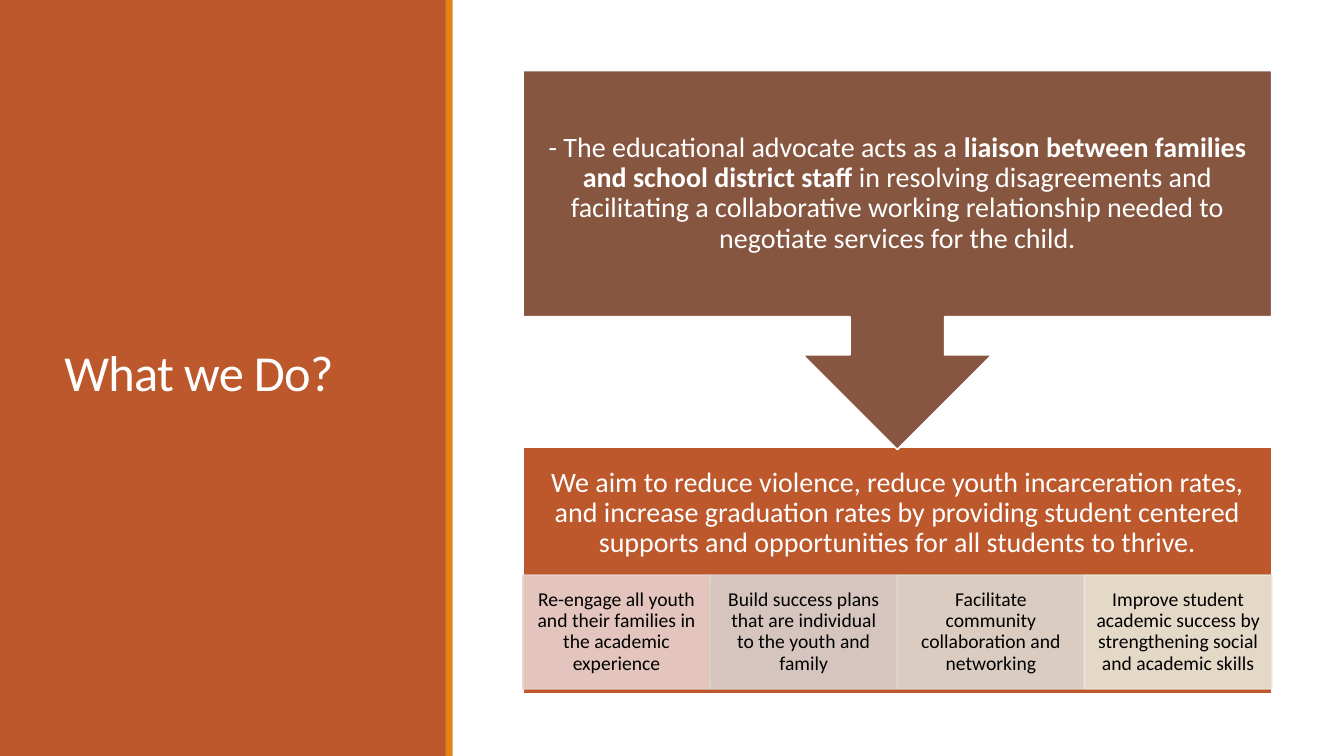
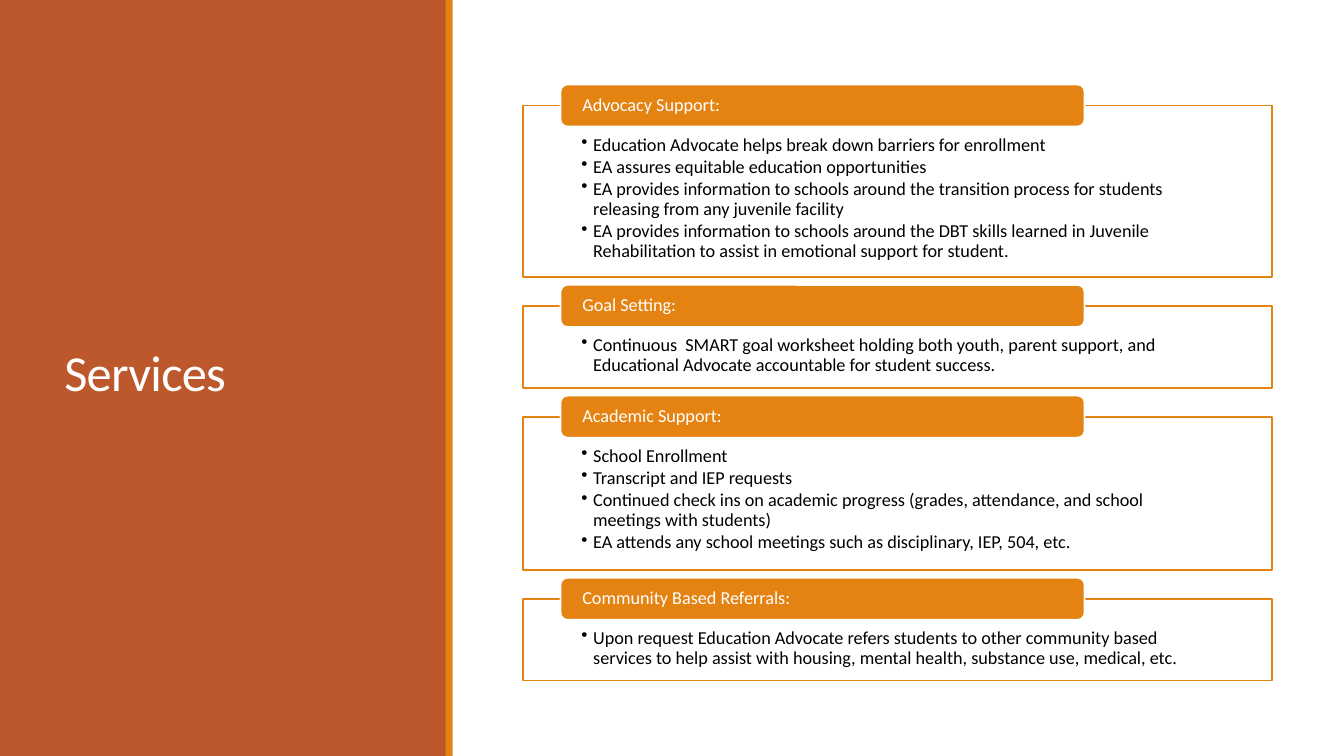
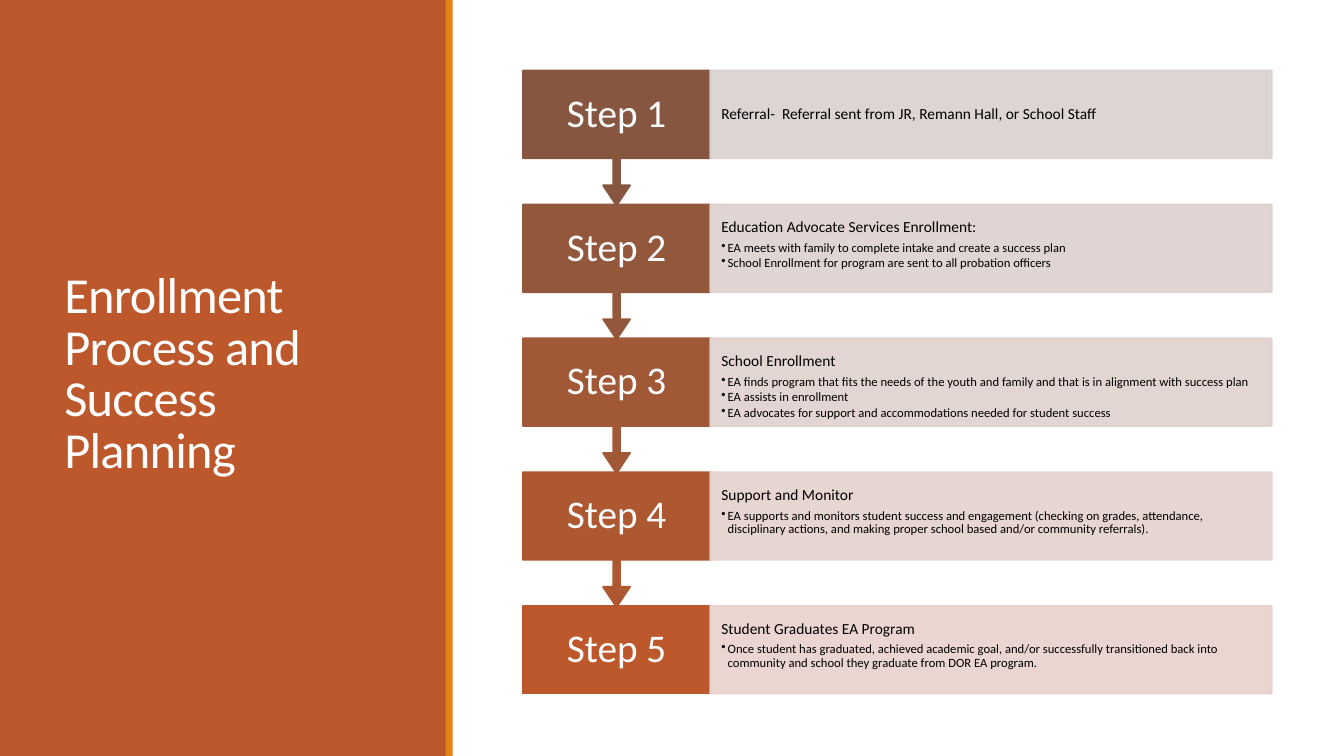
from collections import namedtuple

from lxml.etree import SubElement
from pptx import Presentation
from pptx.dml.color import RGBColor
from pptx.enum.shapes import MSO_SHAPE
from pptx.enum.text import MSO_ANCHOR, MSO_AUTO_SIZE, PP_ALIGN
from pptx.oxml.ns import qn
from pptx.util import Cm, Pt

# Shared look
FONT = "Calibri"
WHITE = RGBColor(0xFF, 0xFF, 0xFF)
BLACK = RGBColor(0x00, 0x00, 0x00)
RUST = RGBColor(0xBD, 0x58, 0x2C)
ORANGE = RGBColor(0xE4, 0x83, 0x12)
BROWN = RGBColor(0x86, 0x56, 0x40)
PALE_ROSE = RGBColor(0xE8, 0xD1, 0xCD)
PALE_BROWN = RGBColor(0xD9, 0xD1, 0xCF)
PALE_TAUPE = RGBColor(0xDE, 0xD9, 0xD1)
PALE_OLIVE = RGBColor(0xE9, 0xE7, 0xD8)
STEP_COLOURS = [
    (BROWN, PALE_BROWN),
    (RGBColor(0x93, 0x57, 0x3C), RGBColor(0xDD, 0xD1, 0xCE)),
    (RGBColor(0xA0, 0x58, 0x37), RGBColor(0xE1, 0xD1, 0xCE)),
    (RGBColor(0xAE, 0x58, 0x32), RGBColor(0xE4, 0xD1, 0xCD)),
    (RUST, PALE_ROSE),
]

# Boxes are in centimetres
Box = namedtuple("Box", "left top width height")
PAGE = Box(0, 0, 33.87, 19.05)
PANEL = Box(0, 0, 11.25, PAGE.height)
STRIPE = Box(11.23, 0, 0.18, PAGE.height)
TITLE = Box(1.37, 1.45, 8.56, 16.03)
CONTENT = Box(13.18, 1.78, 18.87, 15.7)

# Wording
LIAISON = [
    ("- The educational advocate acts as a ", False),
    ("liaison between families and school district staff", True),
    (" in resolving disagreements and facilitating a collaborative working "
     "relationship needed to negotiate services for the child.", False),
]
AIM = ("We aim to reduce violence, reduce youth incarceration rates, and increase "
       "graduation rates by providing student centered supports and opportunities "
       "for all students to thrive.")
GOALS = [
    ("Re-engage all youth and their families in the academic experience", PALE_ROSE),
    ("Build success plans that are individual to the youth and family", PALE_BROWN),
    ("Facilitate community collaboration and networking", PALE_TAUPE),
    ("Improve student academic success by strengthening social and academic skills",
     PALE_OLIVE),
]
# Heading, frame height, points
SERVICES = [
    ("Advocacy Support:", 4.32, [
        "Education Advocate helps break down barriers for enrollment",
        "EA assures equitable education opportunities",
        "EA provides information to schools around the transition process for "
        "students releasing from any juvenile facility",
        "EA provides information to schools around the DBT skills learned in "
        "Juvenile Rehabilitation to assist in emotional support for student.",
    ]),
    ("Goal Setting:", 2.06, [
        "Continuous  SMART goal worksheet holding both youth, parent support, and "
        "Educational Advocate accountable for student success.",
    ]),
    ("Academic Support:", 3.86, [
        "School Enrollment",
        "Transcript and IEP requests",
        "Continued check ins on academic progress (grades, attendance, and school "
        "meetings with students)",
        "EA attends any school meetings such as disciplinary, IEP, 504, etc.",
    ]),
    ("Community Based Referrals:", 2.06, [
        "Upon request Education Advocate refers students to other community based "
        "services to help assist with housing, mental health, substance use, "
        "medical, etc.",
    ]),
]
STEPS = [
    ("Referral-  Referral sent from JR, Remann Hall, or School Staff", []),
    ("Education Advocate Services Enrollment:", [
        "EA meets with family to complete intake and create a success plan",
        "School Enrollment for program are sent to all probation officers",
    ]),
    ("School Enrollment", [
        "EA finds program that fits the needs of the youth and family and that is "
        "in alignment with success plan",
        "EA assists in enrollment",
        "EA advocates for support and accommodations needed for student success",
    ]),
    ("Support and Monitor", [
        "EA supports and monitors student success and engagement (checking on "
        "grades, attendance, disciplinary actions, and making proper school based "
        "and/or community referrals).",
    ]),
    ("Student Graduates EA Program", [
        "Once student has graduated, achieved academic goal, and/or successfully "
        "transitioned back into community and school they graduate from DOR EA "
        "program.",
    ]),
]


def place(shape, box):
    shape.left, shape.top, shape.width, shape.height = (Cm(value) for value in box)


def add_block(slide, kind, box, fill, line=None, opacity=100):
    """Add a flat preset shape; opacity applies to its fill and line."""
    shape = slide.shapes.add_shape(kind, *(Cm(value) for value in box))
    shape.shadow.inherit = False
    shape.fill.solid()
    shape.fill.fore_color.rgb = fill
    if line is None:
        shape.line.fill.background()
    else:
        shape.line.color.rgb = line
        shape.line.width = Pt(1.25)
    if opacity < 100:
        for colour in shape.element.spPr.iter(qn("a:srgbClr")):
            if line == fill or colour.getparent().getparent().tag != qn("a:ln"):
                SubElement(colour, qn("a:alpha")).set("val", str(opacity * 1000))
    return shape


def set_frame(shape, side, top, bottom, anchor=MSO_ANCHOR.MIDDLE):
    """Set the text margins and the vertical anchor."""
    frame = shape.text_frame
    frame.word_wrap = True
    frame.auto_size = MSO_AUTO_SIZE.NONE
    frame.vertical_anchor = anchor
    frame.margin_left = frame.margin_right = Cm(side)
    frame.margin_top, frame.margin_bottom = Cm(top), Cm(bottom)


def add_paragraph(shape, runs, size, colour, align=PP_ALIGN.LEFT, bullet_indent=0):
    """Fill the first empty paragraph, or append one; runs are (text, bold)."""
    frame = shape.text_frame
    paragraph = frame.paragraphs[0]
    if paragraph.runs:
        paragraph = frame.add_paragraph()
    paragraph.alignment = align
    paragraph.line_spacing = 0.9
    paragraph.space_after = Pt(round(size * (0.15 if bullet_indent else 0.35), 1))
    if bullet_indent:
        paragraph.level = 1
        properties = paragraph._p.get_or_add_pPr()
        properties.set("marL", str(Cm(bullet_indent)))
        properties.set("indent", str(-Cm(bullet_indent)))
        SubElement(properties, qn("a:buChar")).set("char", "•")
    for text, bold in [(runs, False)] if isinstance(runs, str) else runs:
        run = paragraph.add_run()
        run.text = text
        run.font.name, run.font.size, run.font.bold = FONT, Pt(size), bold
        run.font.color.rgb = colour
    return paragraph


def add_panel_slide(presentation, title_text):
    """Add a slide with the coloured title panel on the left."""
    slide = presentation.slides.add_slide(presentation.slide_layouts[5])
    add_block(slide, MSO_SHAPE.RECTANGLE, PANEL, RUST)
    add_block(slide, MSO_SHAPE.RECTANGLE, STRIPE, ORANGE)
    title = slide.shapes.title
    place(title, TITLE)
    set_frame(title, 0.25, 0.13, 0.13)
    paragraph = add_paragraph(title, title_text, 36, WHITE)
    paragraph.line_spacing = 0.85
    paragraph.space_after = Pt(0)
    paragraph.runs[0].font._element.set("spc", "-50")
    slide.shapes.element.append(title.element)  # bring in front of the panel
    return slide


def add_mission(slide, box):
    """Callout pointing down to the aim, with a row of goals below it."""
    # Aim, its text kept above the goals
    aim_height = 6.22
    aim_top = box.top + box.height - aim_height
    aim = add_block(slide, MSO_SHAPE.RECTANGLE,
                    Box(box.left, aim_top, box.width, aim_height), RUST, WHITE)
    set_frame(aim, 0.41, 0.41, 3.27)
    add_paragraph(aim, AIM, 20, WHITE, PP_ALIGN.CENTER)

    # Goals
    width = box.width / len(GOALS)
    for index, (text, colour) in enumerate(GOALS):
        goal_box = Box(box.left + index * width, aim_top + 0.52 * aim_height,
                       width, 0.46 * aim_height)
        goal = add_block(slide, MSO_SHAPE.RECTANGLE, goal_box, colour, colour, 90)
        set_frame(goal, 0.28, 0.05, 0.05)
        add_paragraph(goal, text, 14, BLACK, PP_ALIGN.CENTER)

    # Callout
    callout = add_block(slide, MSO_SHAPE.DOWN_ARROW_CALLOUT,
                        Box(box.left, box.top, box.width, 9.55), BROWN, WHITE)
    set_frame(callout, 0.41, 0.41, 0.41)
    add_paragraph(callout, LIAISON, 20, WHITE, PP_ALIGN.CENTER)


def add_service(slide, box, heading, points):
    """Outlined list with a heading tab over its top edge."""
    frame = add_block(slide, MSO_SHAPE.RECTANGLE, box, WHITE, ORANGE, 90)
    set_frame(frame, 1.47, 0.75, 0.25, MSO_ANCHOR.TOP)
    for point in points:
        add_paragraph(frame, point, 13, BLACK, bullet_indent=0.3)
    tab_box = Box(box.left + 0.05 * box.width, box.top - 0.53, 0.7 * box.width, 1.06)
    tab = add_block(slide, MSO_SHAPE.ROUNDED_RECTANGLE, tab_box, ORANGE, WHITE)
    set_frame(tab, 0.5, 0, 0)
    add_paragraph(tab, heading, 13, WHITE)


def add_services(slide, box):
    top, gap = box.top + 0.88, 0.73
    for heading, height, points in SERVICES:
        add_service(slide, Box(box.left, top, box.width, height), heading, points)
        top += height + gap


def add_step(slide, box, number, heading, points):
    """Step label, with an arrow to the next step, and its details."""
    colour, pale = STEP_COLOURS[number - 1]
    label_width = box.width / 4
    if number < len(STEPS):
        label = add_block(slide, MSO_SHAPE.DOWN_ARROW_CALLOUT,
                          Box(box.left, box.top, label_width, box.height / 0.65),
                          colour, colour)
        for index, value in enumerate((0.05, 0.1, 0.15, 0.65)):
            label.adjustments[index] = value
    else:
        label = add_block(slide, MSO_SHAPE.RECTANGLE,
                          box._replace(width=label_width), colour, colour)
    set_frame(label, 0.33, 0.5, 0.5)
    add_paragraph(label, f"Step {number}", 28, WHITE, PP_ALIGN.CENTER)

    details_box = box._replace(left=box.left + label_width,
                               width=box.width - label_width)
    details = add_block(slide, MSO_SHAPE.RECTANGLE, details_box, pale, pale, 90)
    set_frame(details, 0.28, 0.38, 0.38,
              MSO_ANCHOR.TOP if points else MSO_ANCHOR.MIDDLE)
    add_paragraph(details, heading, 11, BLACK)
    for point in points:
        add_paragraph(details, point, 9, BLACK, bullet_indent=0.16)


def add_steps(slide, box):
    height = 2.21
    pitch = (box.height - height) / (len(STEPS) - 1)
    # Last step first, so that each arrow tip lies over the next label
    for index, (heading, points) in reversed(list(enumerate(STEPS))):
        step_box = Box(box.left, box.top + index * pitch, box.width, height)
        add_step(slide, step_box, index + 1, heading, points)


def main():
    presentation = Presentation()
    presentation.slide_width, presentation.slide_height = Cm(PAGE.width), Cm(PAGE.height)
    for title, fill_content in [
        ("What we Do?", add_mission),
        ("Services", add_services),
        ("Enrollment Process and Success Planning", add_steps),
    ]:
        fill_content(add_panel_slide(presentation, title), CONTENT)
    presentation.save("out.pptx")


if __name__ == "__main__":
    main()
